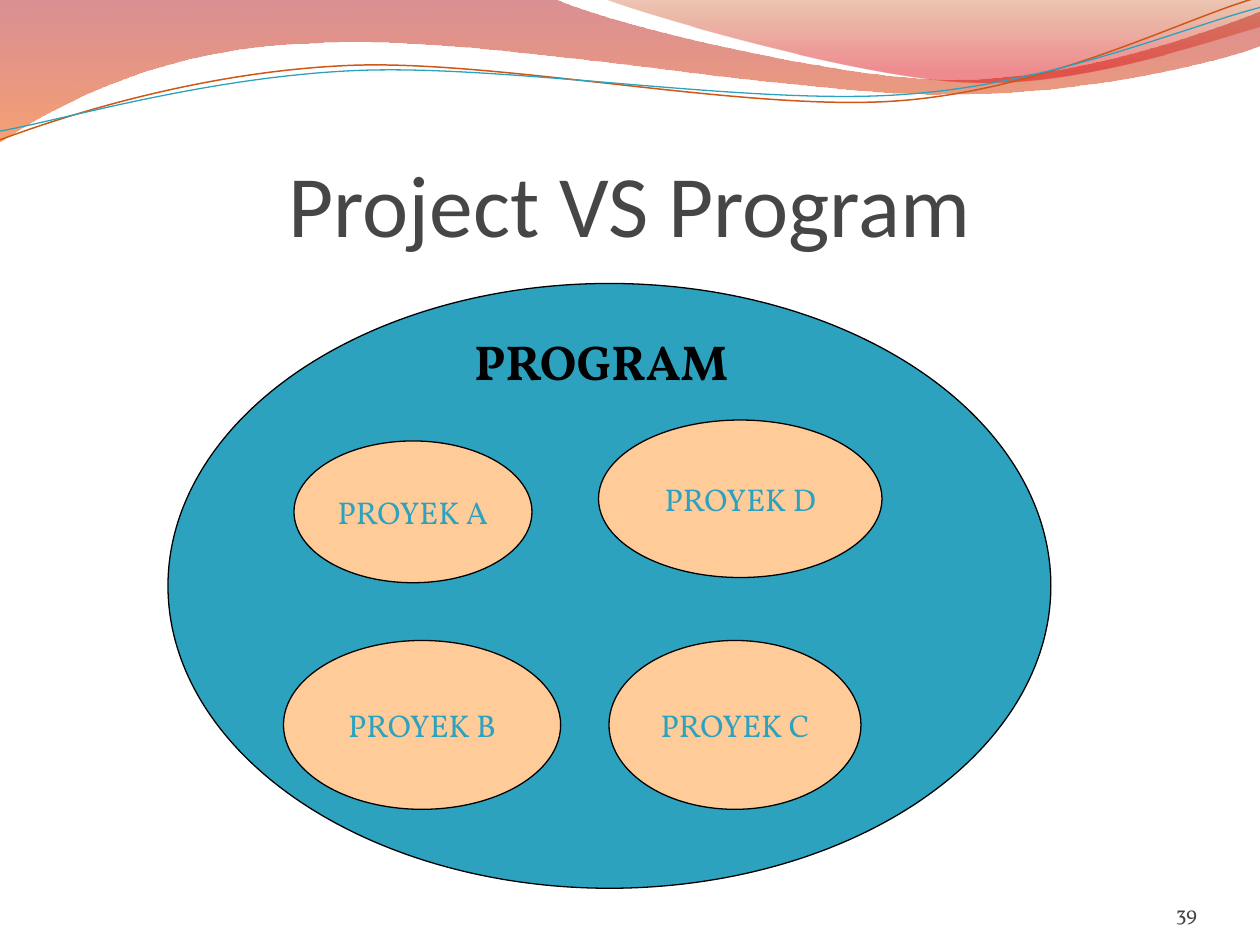
from math import cos, radians, sin

from lxml.etree import SubElement
from pptx import Presentation
from pptx.dml.color import RGBColor
from pptx.enum.shapes import MSO_SHAPE
from pptx.enum.text import MSO_ANCHOR, MSO_AUTO_SIZE, PP_ALIGN
from pptx.oxml.ns import qn
from pptx.util import Pt

TEAL, PEACH, BLACK = "2DA2BF", "FFCC99", "000000"
SERIF = "Vollkorn"
TITLE = "Project VS Program"
NUMBER = "39"

# Ellipses: left, top, width, height
PROGRAM = (96, 162, 504.5, 345.6)
PROJECTS = [
    ("PROYEK A", (168, 252, 136, 81)),
    ("PROYEK D", (342, 240, 162, 90)),
    ("PROYEK B", (162, 366, 158.4, 96.5)),
    ("PROYEK C", (348, 366, 144, 96.5)),
]

# Paths: a first point, then (x, y) for a line or six numbers for a curve.
# Gradient stops: position, colour, opacity in percent
BANDS = [
    ([(0, 0), (316.8, -0.7),
      (342.7, 12.2, 478.1, 45.4, 545.8, 45.4),
      (614.2, 45.4, 689.8, 18.7, 720, 6.5),
      (720.7, 25.9),
      (707.8, 31.7, 626.4, 54.7, 537.1, 54),
      (447.8, 54, 275, 20.2, 185, 24.5),
      (92.9, 25.9, 33.1, 59.8, -0.7, 81.4)],
     [(0, "AF0911", 45), (1, "EE5300", 55)]),
    ([(344.9, -0.7),
      (366.5, 7.9, 491, 44.6, 553.7, 46.8),
      (616.3, 49.7, 691.9, 23, 720, 15.1),
      (720, 0)],
     [(0, "C24400", 30), (0.8, "DC000B", 45)]),
]
# Waves: path, centre of turn, colour, line width
WAVES = [
    ([(0, 79.9),
      (34.6, 67, 113.8, 41, 199.4, 37.4),
      (284.4, 33.8, 427, 64.1, 513.4, 57.6),
      (599.8, 51.1, 675.4, 10.8, 718.6, -1.4)], (359.3, 41.4), "CF5818", 0.85),
    ([(0, 74.9),
      (33.8, 69.1, 118.1, 43.9, 203.8, 40.3),
      (290.2, 36.7, 429.8, 60.5, 516.2, 54),
      (601.9, 48.2, 677.5, 15.1, 720, 4.3)], (359.6, 42.5), TEAL, 0.75),
]
TILT = 2.7  # degrees the waves lean to the left


def color(code):
    return RGBColor.from_string(code)


def level(part, centre):
    """Undo the tilt of every point in one part of a path."""
    cx, cy = centre
    c, s = cos(radians(TILT)), sin(radians(TILT))
    flat = []
    for x, y in zip(part[::2], part[1::2]):
        dx, dy = x - cx, y - cy
        flat += [cx + dx * c - dy * s, cy + dx * s + dy * c]
    return tuple(flat)


def draw(path, close):
    """Lay all points as lines, then join each three of a curve into one."""
    dots = [(Pt(x), Pt(y)) for part in path
            for x, y in zip(part[::2], part[1::2])]
    pen = slide.shapes.build_freeform(*dots[0])
    pen.add_line_segments(dots[1:], close=close)
    shape = pen.convert_to_shape()
    shape.shadow.inherit = False
    lines = shape.element.spPr.findall(".//" + qn("a:lnTo"))
    for part in path[1:]:
        first = lines.pop(0)
        if len(part) == 6:
            first.tag = qn("a:cubicBezTo")
            for line in (lines.pop(0), lines.pop(0)):
                first.append(line[0])
                line.getparent().remove(line)
    return shape


def write(frame, text, font, size, code, align, anchor, bold=False):
    frame.vertical_anchor = anchor
    para = frame.paragraphs[0]
    para.alignment = align
    run = para.add_run()
    run.text = text
    run.font.name = font
    run.font.size = Pt(size)
    run.font.bold = bold
    run.font.color.rgb = color(code)


def inset(frame, top=0):
    frame.margin_left = frame.margin_right = frame.margin_bottom = 0
    frame.margin_top = Pt(top)


def oval(box, fill):
    shape = slide.shapes.add_shape(MSO_SHAPE.OVAL, *map(Pt, box))
    shape.shadow.inherit = False
    shape.fill.solid()
    shape.fill.fore_color.rgb = color(fill)
    shape.line.color.rgb = color(BLACK)
    shape.line.width = Pt(0.75)
    return shape


deck = Presentation()
deck.slide_width, deck.slide_height = Pt(720), Pt(540)
slide = deck.slides.add_slide(deck.slide_layouts[5])

for path, stops in BANDS:
    band = draw(path, True)
    band.line.fill.background()
    band.fill.gradient()
    band.fill.gradient_angle = 270
    for stop, (place, code, alpha) in zip(band.fill.gradient_stops, stops):
        stop.position = place
        stop.color.rgb = color(code)
    tints = band.element.spPr.iter(qn("a:srgbClr"))
    for tint, (place, code, alpha) in zip(tints, stops):
        SubElement(tint, qn("a:alpha"), val=str(alpha * 1000))

for path, centre, code, width in WAVES:
    wave = draw([level(part, centre) for part in path], False)
    wave.rotation = 360 - TILT
    wave.fill.background()
    wave.line.color.rgb = color(code)
    wave.line.width = Pt(width)

title = slide.shapes.title
title.left, title.top, title.width, title.height = map(Pt, (36, 55.5, 648, 90))
frame = title.text_frame
frame.auto_size = MSO_AUTO_SIZE.NONE
inset(frame, 3.6)
write(frame, TITLE, "Calibri", 50, "464646", PP_ALIGN.CENTER, MSO_ANCHOR.BOTTOM)

frame = slide.shapes.add_textbox(*map(Pt, (624, 500.4, 60, 28.8))).text_frame
frame.word_wrap = True
inset(frame)
write(frame, NUMBER, SERIF, 12, "434343", PP_ALIGN.RIGHT, MSO_ANCHOR.BOTTOM)

oval(PROGRAM, TEAL)
frame = slide.shapes.add_textbox(*map(Pt, (264, 186, 160.5, 41))).text_frame
frame.word_wrap = False
frame.auto_size = MSO_AUTO_SIZE.SHAPE_TO_FIT_TEXT
write(frame, "PROGRAM", SERIF, 28, BLACK, PP_ALIGN.LEFT, MSO_ANCHOR.TOP, True)

for name, box in PROJECTS:
    frame = oval(box, PEACH).text_frame
    frame.word_wrap = False
    write(frame, name, SERIF, 18, TEAL, PP_ALIGN.CENTER, MSO_ANCHOR.MIDDLE)

deck.save("out.pptx")
